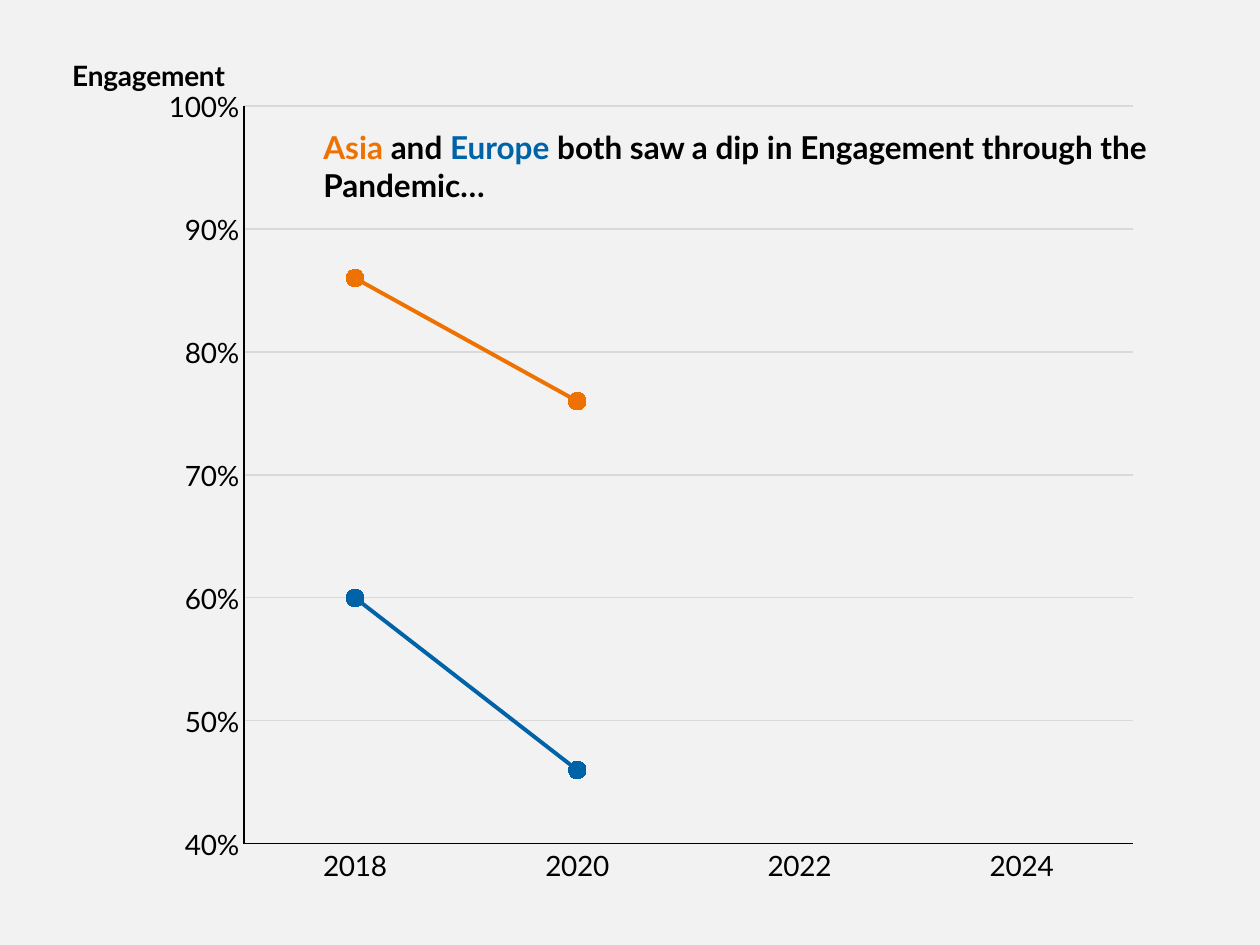
from dataclasses import dataclass

from pptx import Presentation
from pptx.chart.data import CategoryChartData
from pptx.dml.color import RGBColor as Color
from pptx.enum.chart import XL_CHART_TYPE as ChartType
from pptx.enum.chart import XL_MARKER_STYLE as MarkerStyle
from pptx.enum.chart import XL_TICK_MARK as TickMark
from pptx.enum.text import MSO_AUTO_SIZE as AutoSize
from pptx.oxml import parse_xml
from pptx.oxml.ns import nsdecls
from pptx.util import Emu, Pt


@dataclass(frozen=True)
class Theme:
    font: str = "Lato"
    background: Color = Color(0xF2, 0xF2, 0xF2)
    ink: Color = Color(0, 0, 0)
    grid: Color = Color(0xD9, 0xD9, 0xD9)
    asia: Color = Color(0xEE, 0x72, 0x02)
    europe: Color = Color(0x00, 0x62, 0xA7)
    label_size: Pt = Pt(16)
    headline_size: Pt = Pt(18)
    hairline: Pt = Pt(0.75)
    trend_line: Pt = Pt(2.25)
    marker_size: int = 10


THEME = Theme()
PAGE_SIZE = (1260, 945)
CHART_BOX = (44, 26, 1109, 882)
HEADLINE_BOX = (267, 96, 863, 89)
PLOT_BOX = (200, 80, 889, 738)
AXIS_TITLE_AT = (23, 25)

YEARS = ["2018", "2020", "2022", "2024"]
SERIES = [
    ("Series 1", [0.86, 0.76, None, None], THEME.asia),
    ("Series 2", [0.60, 0.46, None, None], THEME.europe),
]
HEADLINE = [
    ("Asia", THEME.asia),
    (" and ", THEME.ink),
    ("Europe", THEME.europe),
    (" both saw a dip in Engagement through the Pandemic…", THEME.ink),
]


def px(count):
    return Emu(round(count * 914400 / 126))


def style_font(font, size, color, bold=False):
    font.name = THEME.font
    font.size = size
    font.bold = bold
    font.color.rgb = color


def style_line(line, color, width):
    line.color.rgb = color
    line.width = width


def set_layout(parent, index, box, frame, inner=False):
    for old in parent.xpath("c:layout"):
        parent.remove(old)
    extents = frame[2:] * 2
    values = [length / extent for length, extent in zip(box, extents)]
    names = ["x", "y", "w", "h"][:len(box)]
    target = '<c:layoutTarget val="inner"/>' if inner else ""
    modes = "".join(f'<c:{name}Mode val="edge"/>' for name in names[:2])
    places = "".join(
        f'<c:{name} val="{value:.4f}"/>' for name, value in zip(names, values)
    )
    parent.insert(index, parse_xml(
        f"<c:layout {nsdecls('c')}><c:manualLayout>"
        f"{target}{modes}{places}</c:manualLayout></c:layout>"
    ))


def style_axis(axis):
    axis.major_tick_mark = axis.minor_tick_mark = TickMark.NONE
    style_font(axis.tick_labels.font, THEME.label_size, THEME.ink)
    style_line(axis.format.line, THEME.ink, THEME.hairline)


def style_value_axis(axis, frame):
    axis.minimum_scale, axis.maximum_scale, axis.major_unit = 0.4, 1, 0.1
    axis.tick_labels.number_format = "0%"
    axis.tick_labels.number_format_is_linked = False
    axis.has_major_gridlines = True
    style_line(axis.major_gridlines.format.line, THEME.grid, THEME.hairline)
    title = axis.axis_title
    para = title.text_frame.paragraphs[0]
    para.text = "Engagement"
    style_font(para.runs[0].font, THEME.label_size, THEME.ink, bold=True)
    body = title.element.xpath(".//a:bodyPr")[0]
    body.set("rot", "0")
    body.set("vert", "horz")
    set_layout(title.element, 1, AXIS_TITLE_AT, frame)


def style_series(series, color):
    series.smooth = False
    style_line(series.format.line, color, THEME.trend_line)
    marker = series.marker
    marker.style = MarkerStyle.CIRCLE
    marker.size = THEME.marker_size
    marker.format.fill.solid()
    marker.format.fill.fore_color.rgb = color
    marker.format.line.color.rgb = color


def add_engagement_chart(page, box):
    data = CategoryChartData(number_format="0%")
    data.categories = YEARS
    for name, values, color in SERIES:
        data.add_series(name, values)
    chart = page.shapes.add_chart(
        ChartType.LINE_MARKERS, *map(px, box), data
    ).chart
    chart.has_legend = False
    chart.has_title = False
    style_font(chart.font, THEME.label_size, THEME.ink)
    plot = chart.plots[0]
    plot.vary_by_categories = False
    for series, (name, values, color) in zip(plot.series, SERIES):
        style_series(series, color)
    for axis in (chart.category_axis, chart.value_axis):
        style_axis(axis)
    style_value_axis(chart.value_axis, box)
    plot_area = chart.element.xpath(".//c:plotArea")[0]
    set_layout(plot_area, 0, PLOT_BOX, box, inner=True)


def add_headline(page, box, frame):
    left, top, width, height = box
    place = (frame[0] + left, frame[1] + top, width, height)
    text = page.shapes.add_textbox(*map(px, place)).text_frame
    text.word_wrap = True
    text.auto_size = AutoSize.SHAPE_TO_FIT_TEXT
    para = text.paragraphs[0]
    for words, color in HEADLINE:
        span = para.add_run()
        span.text = words
        style_font(span.font, THEME.headline_size, color, bold=True)


def main():
    deck = Presentation()
    deck.slide_width, deck.slide_height = map(px, PAGE_SIZE)
    page = deck.slides.add_slide(deck.slide_layouts[6])
    page.background.fill.solid()
    page.background.fill.fore_color.rgb = THEME.background
    add_engagement_chart(page, CHART_BOX)
    add_headline(page, HEADLINE_BOX, CHART_BOX)
    deck.save("out.pptx")


if __name__ == "__main__":
    main()
